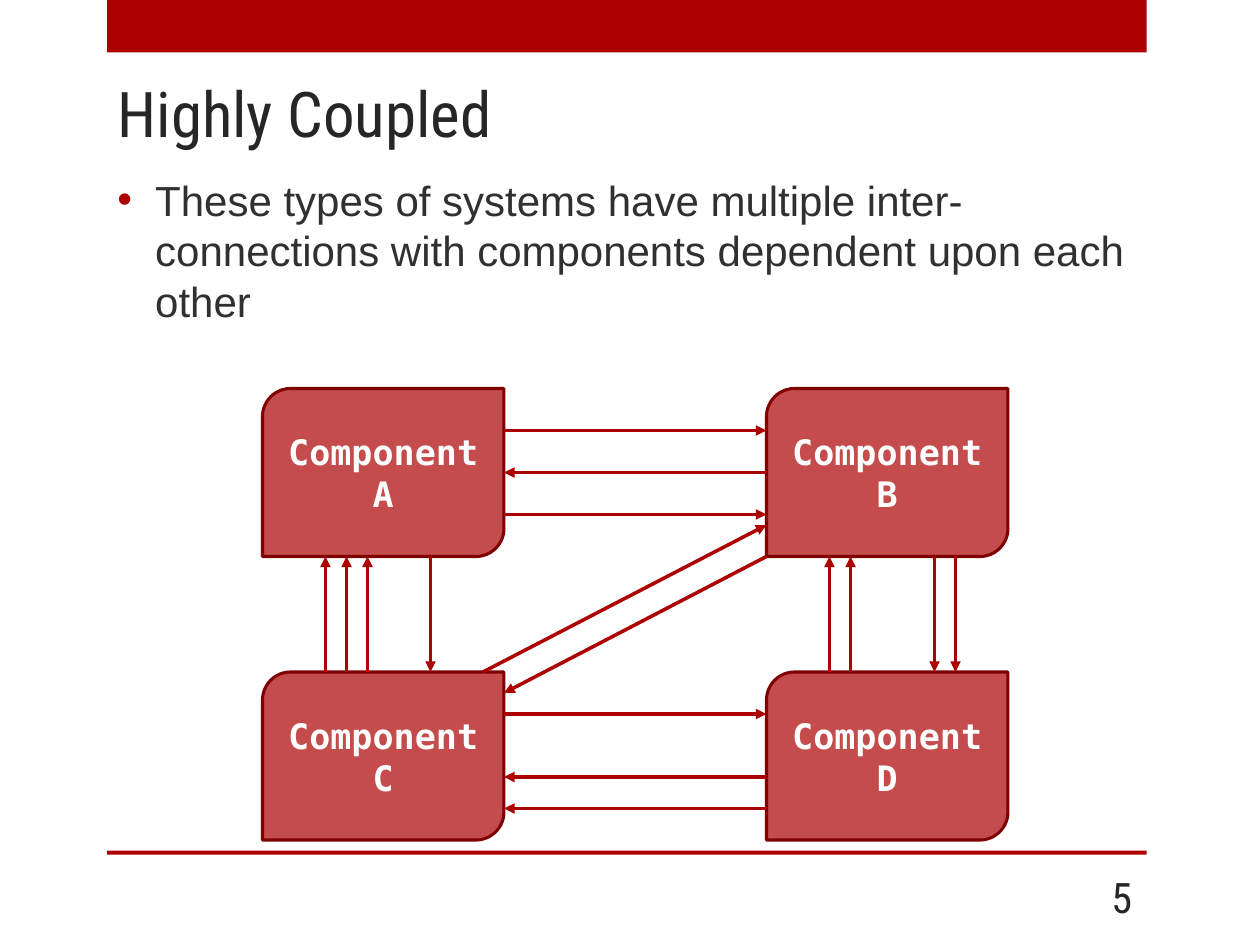
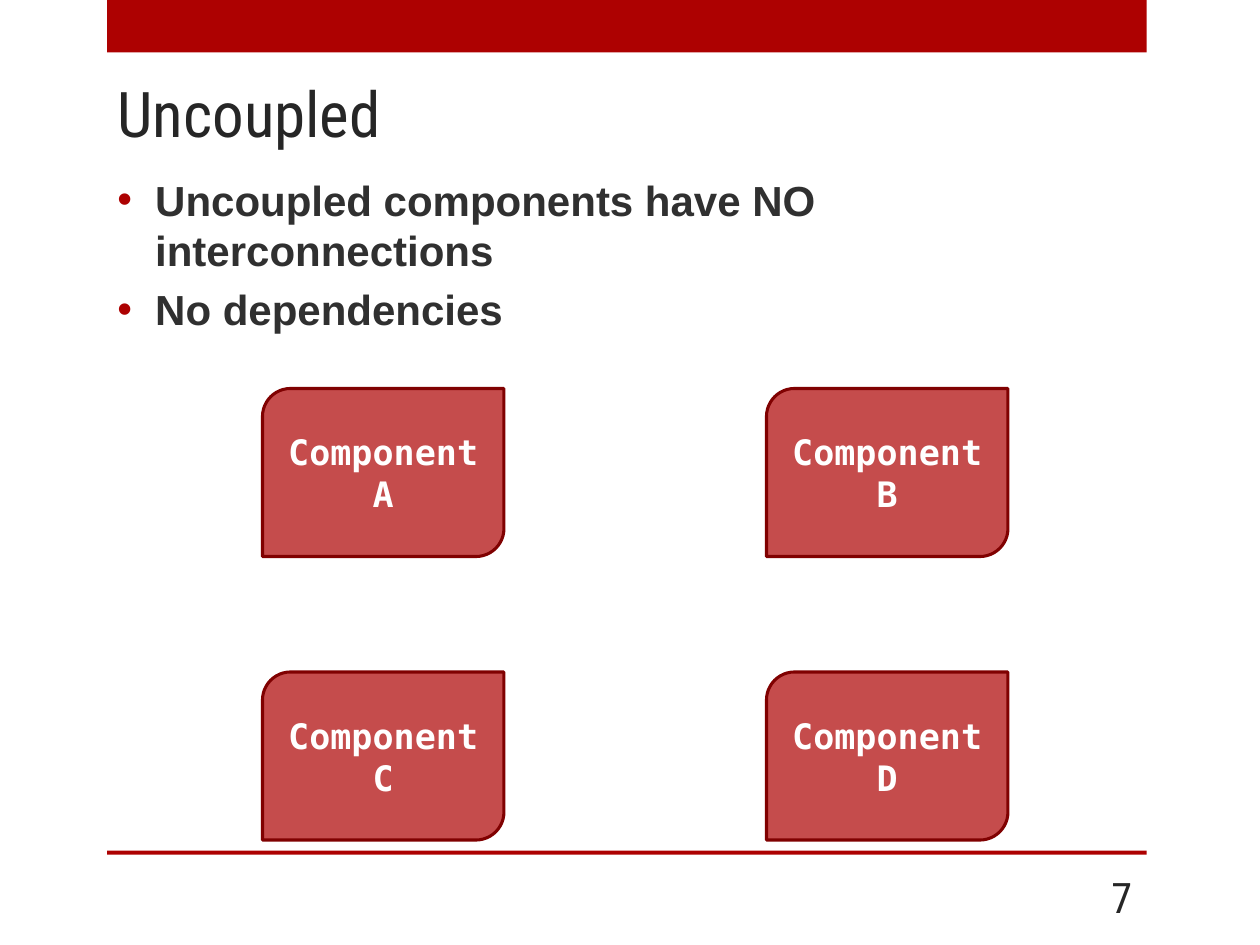
import pptx
import pptx.dml.color
import pptx.enum.shapes
import pptx.enum.text
import pptx.oxml
import pptx.oxml.ns
import pptx.util
from lxml import etree

SHAPE = pptx.enum.shapes.MSO_SHAPE
ALIGN = pptx.enum.text.PP_ALIGN
ANCHOR = pptx.enum.text.MSO_ANCHOR

RED, DARK_RED, WHITE = "AD0101", "800101", "FFFFFF"
HEADING, BODY = "262626", "303030"
CONDENSED, SANS, MONO = "Roboto Condensed", "Arial", "DejaVu Sans Mono"

# Lengths are px, 120 to the inch.
EMU_PER_PX = 914400 // 120
SLIDE_SIZE = (1200, 900)
BANDS = [(102, 0, 990, 50), (102, 810, 990, 4)]
TITLE_BOX = (100, 64, 990, 86)
BULLETS_BOX = (100, 160, 990, 160)
NUMBER_BOX = (990, 830, 100, 48)
BULLET_INDENT = 36

COMPONENT_SIZE = (230, 160)
COLUMNS, ROWS = (250, 730), (370, 640)
COMPONENTS = [("A", 0, 0), ("C", 0, 1), ("B", 1, 0), ("D", 1, 1)]

# The gaps between the components, which the arrows cross.
GAP_LEFT, GAP_RIGHT = COLUMNS[0] + COMPONENT_SIZE[0], COLUMNS[1]
GAP_TOP, GAP_BOTTOM = ROWS[0] + COMPONENT_SIZE[1], ROWS[1]

UPWARD = [310, 330, 350, 790, 810]
DOWNWARD = [410, 890, 910]
RIGHTWARD = [410, 490, 680]
LEFTWARD = [450, 740, 770]
DIAGONAL = [
    (460, GAP_BOTTOM, GAP_RIGHT, 500),
    (GAP_RIGHT, GAP_TOP, GAP_LEFT, 660),
]
DEPENDENCIES = (
    [(x, GAP_BOTTOM, x, GAP_TOP) for x in UPWARD]
    + [(x, GAP_TOP, x, GAP_BOTTOM) for x in DOWNWARD]
    + [(GAP_LEFT, y, GAP_RIGHT, y) for y in RIGHTWARD]
    + [(GAP_RIGHT, y, GAP_LEFT, y) for y in LEFTWARD]
    + DIAGONAL
)

SLIDES = [
    {
        "title": "Highly Coupled",
        "number": "5",
        "bullets": ["These types of systems have multiple inter-connections "
                    "with components dependent upon each other"],
        "bold": False,
        "dependencies": DEPENDENCIES,
    },
    {
        "title": "Uncoupled",
        "number": "7",
        "bullets": ["Uncoupled components have NO interconnections",
                    "No dependencies"],
        "bold": True,
        "dependencies": [],
    },
]


def px(*lengths):
    return [pptx.util.Emu(length * EMU_PER_PX) for length in lengths]


def rgb(color):
    return pptx.dml.color.RGBColor.from_string(color)


def add_child(parent, tag, **attributes):
    return etree.SubElement(parent, pptx.oxml.ns.qn(tag), attributes)


def write(shape, *lines, font, size, color, bold=False, align=ALIGN.LEFT,
          anchor=ANCHOR.MIDDLE, bulleted=False):
    """Fill a shape with one paragraph per line, all in one format."""
    frame = shape.text_frame
    frame.word_wrap = True
    frame.auto_size = pptx.enum.text.MSO_AUTO_SIZE.NONE
    frame.vertical_anchor = anchor
    frame.text = "\n".join(lines)
    for paragraph in frame.paragraphs:
        paragraph.alignment = align
        run = paragraph.runs[0]
        run.font.name = font
        run.font.size = pptx.util.Pt(size)
        run.font.bold = bold
        run.font.color.rgb = rgb(color)
        if bulleted:
            add_bullet(paragraph, size)


def add_bullet(paragraph, size):
    paragraph.space_before = pptx.util.Pt(size * 0.2)
    indent = px(BULLET_INDENT)[0]
    properties = paragraph._p.get_or_add_pPr()
    properties.set("marL", str(indent))
    properties.set("indent", str(-indent))
    add_child(add_child(properties, "a:buClr"), "a:srgbClr", val=RED)
    add_child(properties, "a:buFont", typeface=SANS)
    add_child(properties, "a:buChar", char="•")


def add_band(slide, box):
    band = slide.shapes.add_shape(SHAPE.RECTANGLE, *px(*box))
    band.shadow.inherit = False
    band.fill.solid()
    band.fill.fore_color.rgb = rgb(RED)
    band.line.fill.background()


def add_component(slide, letter, column, row):
    component = slide.shapes.add_shape(
        SHAPE.ROUND_2_DIAG_RECTANGLE,
        *px(COLUMNS[column], ROWS[row], *COMPONENT_SIZE))
    component.shadow.inherit = False
    component.fill.solid()
    component.fill.fore_color.rgb = rgb(RED)
    fill_color = component._element.spPr.find(".//" + pptx.oxml.ns.qn("a:srgbClr"))
    add_child(fill_color, "a:alpha", val="70000")
    component.line.color.rgb = rgb(DARK_RED)
    component.line.width = pptx.util.Pt(1.75)
    write(component, f"Component {letter}", font=MONO, size=20, color=WHITE,
          bold=True, align=ALIGN.CENTER)


def add_dependency(slide, ends):
    arrow = slide.shapes.add_connector(
        pptx.enum.shapes.MSO_CONNECTOR.STRAIGHT, *px(*ends))
    arrow.line.color.rgb = rgb(RED)
    arrow.line.width = pptx.util.Pt(2)
    add_child(arrow.line._get_or_add_ln(), "a:tailEnd", type="triangle")
    add_child(arrow._element.spPr, "a:effectLst")


def add_slide(deck, content):
    slide = deck.slides.add_slide(deck.slide_layouts[5])
    for box in BANDS:
        add_band(slide, box)

    title = slide.shapes.title
    title.left, title.top, title.width, title.height = px(*TITLE_BOX)
    write(title, content["title"], font=CONDENSED, size=36, color=HEADING)

    bullets = slide.shapes.add_textbox(*px(*BULLETS_BOX))
    write(bullets, *content["bullets"], font=SANS, size=24, color=BODY,
          bold=content["bold"], anchor=ANCHOR.TOP, bulleted=True)

    number = slide.shapes.add_textbox(*px(*NUMBER_BOX))
    write(number, content["number"], font=CONDENSED, size=24, color=HEADING,
          align=ALIGN.RIGHT)

    for component in COMPONENTS:
        add_component(slide, *component)
    for ends in content["dependencies"]:
        add_dependency(slide, ends)


def main():
    deck = pptx.Presentation()
    deck.slide_width, deck.slide_height = px(*SLIDE_SIZE)
    for content in SLIDES:
        add_slide(deck, content)
    deck.save("out.pptx")


if __name__ == "__main__":
    main()
